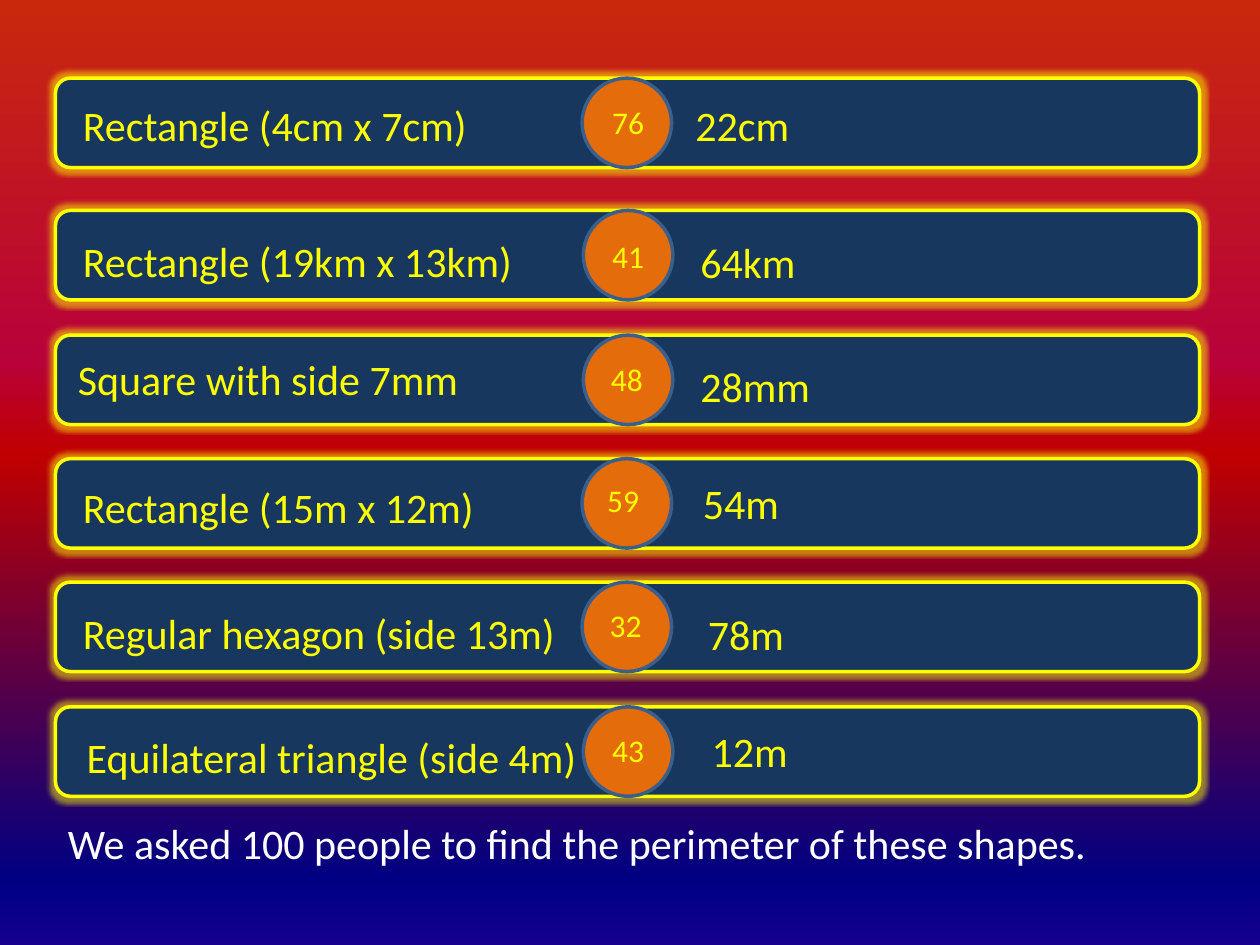
import copy
from dataclasses import dataclass

import lxml.etree
import pptx
import pptx.dml.color
import pptx.enum.shapes
import pptx.enum.text
import pptx.oxml.ns
import pptx.util

Inches = pptx.util.Inches
Pt = pptx.util.Pt
RGB = pptx.dml.color.RGBColor.from_string
SHAPE = pptx.enum.shapes.MSO_SHAPE
qn = pptx.oxml.ns.qn


@dataclass(frozen=True)
class Theme:
    font: str = "Calibri"
    body_size: int = 24
    score_size: int = 18
    line_width: int = 2
    bar: str = "17375E"
    accent: str = "FFFF00"
    disc: str = "E46C0A"
    disc_edge: str = "3A5F8C"
    caption: str = "FFFFFF"
    background: tuple = ((0, "C9280D"), (38, "B8023A"), (48, "C00000"),
                         (93, "000082"), (100, "150090"))


@dataclass(frozen=True)
class Label:
    text: str
    left: float
    top: float
    width: float


@dataclass(frozen=True)
class Row:
    top: float
    disc_left: float
    question: Label
    score: Label
    answer: Label


THEME = Theme()
BAR_LEFT, BAR_WIDTH, ROW_HEIGHT = 0.44, 9.08, 0.71
BODY_HEIGHT, SCORE_HEIGHT, SCORE_WIDTH = 0.5, 0.4, 0.47

ROWS = (
    Row(0.62, 4.62, Label("Rectangle (4cm x 7cm)", 0.56, 0.74, 3.26),
        Label("76", 4.76, 0.77, SCORE_WIDTH), Label("22cm", 5.42, 0.74, 1.13)),
    Row(1.67, 4.63, Label("Rectangle (19km x 13km)", 0.56, 1.82, 3.66),
        Label("41", 4.76, 1.83, SCORE_WIDTH), Label("64km", 5.46, 1.83, 0.96)),
    Row(2.66, 4.63, Label("Square with side 7mm", 0.52, 2.76, 3.3),
        Label("48", 4.75, 2.81, SCORE_WIDTH), Label("28mm", 5.46, 2.81, 1.43)),
    Row(3.64, 4.62, Label("Rectangle (15m x 12m)", 0.56, 3.77, 3.65),
        Label("59", 4.72, 3.77, SCORE_WIDTH), Label("54m", 5.48, 3.74, 0.86)),
    Row(4.62, 4.62, Label("Regular hexagon (side 13m)", 0.56, 4.77, 4.05),
        Label("32", 4.74, 4.76, SCORE_WIDTH), Label("78m", 5.52, 4.78, 0.9)),
    Row(5.61, 4.63, Label("Equilateral triangle (side 4m)", 0.59, 5.76, 4.13),
        Label("43", 4.76, 5.75, SCORE_WIDTH), Label("12m", 5.55, 5.71, 1.11)),
)
CAPTION = Label("We asked 100 people to find the perimeter of these shapes.",
                0.44, 6.44, 8.35)


def paint_background(slide) -> None:
    fill = slide.background.fill
    fill.gradient()
    fill.gradient_angle = 270
    # Grow the default stop list to one stop per theme colour
    stops = slide.background._cSld.find(".//" + qn("a:gsLst"))
    while len(stops) < len(THEME.background):
        stops.append(copy.deepcopy(stops[0]))
    for stop, (position, color) in zip(fill.gradient_stops, THEME.background):
        stop.position = position / 100
        stop.color.rgb = RGB(color)


def add_filled(slide, kind, left: float, top: float, width: float,
               fill: str, line: str):
    shape = slide.shapes.add_shape(kind, Inches(left), Inches(top),
                                   Inches(width), Inches(ROW_HEIGHT))
    shape.shadow.inherit = False
    shape.fill.solid()
    shape.fill.fore_color.rgb = RGB(fill)
    shape.line.color.rgb = RGB(line)
    shape.line.width = Pt(THEME.line_width)
    return shape


def add_glow(shape, color: str) -> None:
    effects = shape._element.spPr.find(qn("a:effectLst"))
    glow = lxml.etree.SubElement(effects, qn("a:glow"), rad=str(Pt(5)))
    tint = lxml.etree.SubElement(glow, qn("a:srgbClr"), val=color)
    lxml.etree.SubElement(tint, qn("a:alpha"), val="50000")


def add_label(slide, label: Label, height: float = BODY_HEIGHT,
              size: int = THEME.body_size, color: str = THEME.accent) -> None:
    box = slide.shapes.add_textbox(Inches(label.left), Inches(label.top),
                                   Inches(label.width), Inches(height))
    frame = box.text_frame
    frame.word_wrap = True
    frame.auto_size = pptx.enum.text.MSO_AUTO_SIZE.SHAPE_TO_FIT_TEXT
    run = frame.paragraphs[0].add_run()
    run.text = label.text
    run.font.name = THEME.font
    run.font.size = Pt(size)
    run.font.color.rgb = RGB(color)


def main() -> None:
    deck = pptx.Presentation()
    deck.slide_width, deck.slide_height = Inches(10), Inches(7.5)
    slide = deck.slides.add_slide(deck.slide_layouts[6])
    paint_background(slide)

    # Glowing answer bars, each with a score disc
    for row in ROWS:
        bar = add_filled(slide, SHAPE.ROUNDED_RECTANGLE, BAR_LEFT, row.top,
                         BAR_WIDTH, THEME.bar, THEME.accent)
        add_glow(bar, THEME.accent)
        add_filled(slide, SHAPE.OVAL, row.disc_left, row.top,
                   ROW_HEIGHT, THEME.disc, THEME.disc_edge)

    # Questions, answers and scores
    for row in ROWS:
        add_label(slide, row.question)
        add_label(slide, row.answer)
        add_label(slide, row.score, SCORE_HEIGHT, THEME.score_size)

    # Caption under the bars
    add_label(slide, CAPTION, color=THEME.caption)
    deck.save("out.pptx")


if __name__ == "__main__":
    main()
